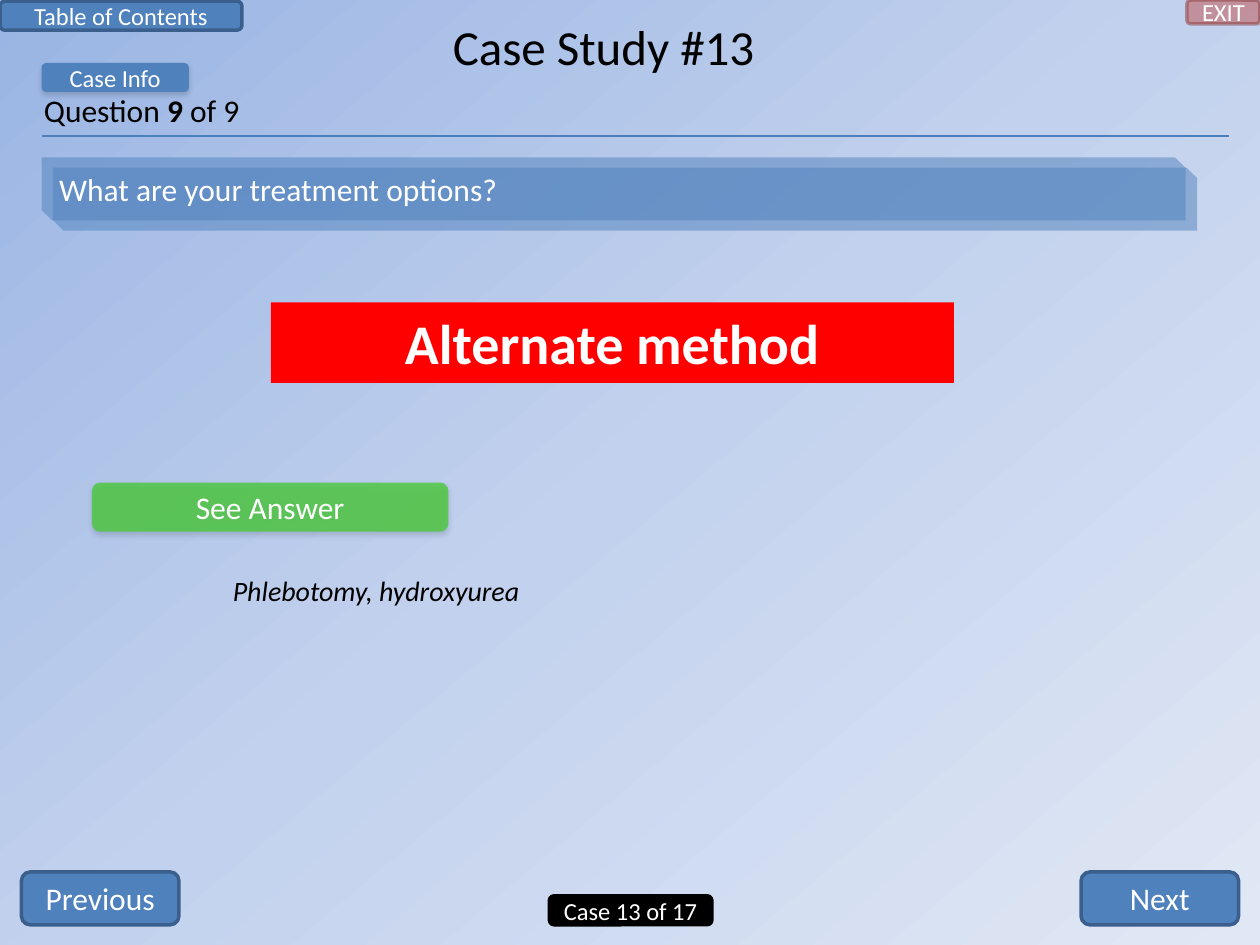
from copy import deepcopy
from dataclasses import dataclass
from typing import Optional

from lxml import etree
from pptx import Presentation
from pptx.dml.color import RGBColor
from pptx.enum import shapes, text
from pptx.oxml import ns
from pptx.util import Inches, Pt

FONT = "Calibri"
BLUE, DARK_BLUE = "4F81BD", "3A5F8C"
WHITE, BLACK = "FFFFFF", "000000"
ROUNDED = shapes.MSO_SHAPE.ROUNDED_RECTANGLE
SNIPPED = shapes.MSO_SHAPE.SNIP_2_DIAG_RECTANGLE
CENTER = text.PP_ALIGN.CENTER
LEFT = text.PP_ALIGN.LEFT
MIDDLE = text.MSO_ANCHOR.MIDDLE
TOP = text.MSO_ANCHOR.TOP


@dataclass
class Panel:
    left: float
    top: float
    width: float
    height: float
    label: str = ""
    size: int = 18
    fill: str = BLUE
    outline: Optional[str] = None
    opacity: int = 100
    shadow: bool = False
    preset: shapes.MSO_SHAPE = ROUNDED
    align: text.PP_ALIGN = CENTER


def color(value: str) -> RGBColor:
    return RGBColor.from_string(value)


def add_child(parent, tag: str, **attributes):
    return etree.SubElement(parent, ns.qn(tag), {k: str(v) for k, v in attributes.items()})


def set_opacity(shape, percent: int) -> None:
    for rgb in shape._element.spPr.iter(ns.qn("a:srgbClr")):
        add_child(rgb, "a:alpha", val=percent * 1000)


def add_shadow(shape) -> None:
    effects = shape._element.spPr.find(ns.qn("a:effectLst"))
    outer = add_child(effects, "a:outerShdw", blurRad=Pt(3.1), dist=Pt(1.8),
                      dir=90 * 60000, rotWithShape=0)
    add_child(add_child(outer, "a:srgbClr", val=BLACK), "a:alpha", val=16000)


def write(shape, *parts: str, size: int, ink: str = BLACK, bold_part: Optional[int] = None,
          italic: bool = False, align=LEFT, anchor=TOP, wrap: bool = True,
          grow: bool = False) -> None:
    frame = shape.text_frame
    frame.word_wrap = wrap
    frame.vertical_anchor = anchor
    if grow:
        frame.auto_size = text.MSO_AUTO_SIZE.SHAPE_TO_FIT_TEXT
    paragraph = frame.paragraphs[0]
    paragraph.alignment = align
    for index, part in enumerate(parts):
        run = paragraph.add_run()
        run.text = part
        run.font.name = FONT
        run.font.size = Pt(size)
        run.font.bold = index == bold_part
        run.font.italic = italic
        run.font.color.rgb = color(ink)


def add_panel(slide, panel: Panel):
    shape = slide.shapes.add_shape(panel.preset, Inches(panel.left), Inches(panel.top),
                                   Inches(panel.width), Inches(panel.height))
    shape.shadow.inherit = False
    shape.fill.solid()
    shape.fill.fore_color.rgb = color(panel.fill)
    if panel.outline:
        shape.line.color.rgb = color(panel.outline)
        shape.line.width = Pt(2)
    else:
        shape.line.fill.background()
    if panel.opacity < 100:
        set_opacity(shape, panel.opacity)
    if panel.shadow:
        add_shadow(shape)
    if panel.label:
        write(shape, panel.label, size=panel.size, ink=WHITE, align=panel.align, anchor=MIDDLE)
    return shape


def add_text(slide, left: float, top: float, width: float, height: float, *parts: str, **style):
    box = slide.shapes.add_textbox(Inches(left), Inches(top), Inches(width), Inches(height))
    write(box, *parts, grow=True, **style)


def paint_background(slide) -> None:
    fill = slide.background.fill
    fill.gradient()
    fill.gradient_angle = 310
    stop_list = next(slide._element.iter(ns.qn("a:gsLst")))
    stop_list.append(deepcopy(stop_list[-1]))
    stops = ((0, "9AB5E4"), (0.5, "C2D1ED"), (1, "E1E8F5"))
    for stop, (position, shade) in zip(fill.gradient_stops, stops):
        stop.position = position
        stop.color.rgb = color(shade)


def add_rule(slide, left: float, right: float, y: float) -> None:
    rule = slide.shapes.add_connector(shapes.MSO_CONNECTOR.STRAIGHT, Inches(left), Inches(y),
                                      Inches(right), Inches(y))
    rule.line.color.rgb = color("4B7EBC")
    rule.line.width = Pt(1.25)
    add_child(rule._element.spPr, "a:effectLst")


def main() -> None:
    deck = Presentation()
    deck.slide_width, deck.slide_height = Inches(10), Inches(7.5)
    slide = deck.slides.add_slide(deck.slide_layouts[6])
    paint_background(slide)

    # Question counter and header rule
    add_text(slide, 0.25, 0.67, 1.77, 0.71, "Question ", "9", " of 9",
             size=18, bold_part=1, wrap=False)
    add_rule(slide, 0.33, 9.75, 1.08)

    # Page navigation
    for left, label in ((0.17, "Previous"), (8.58, "Next")):
        add_panel(slide, Panel(left, 6.92, 1.25, 0.42, label, outline=DARK_BLUE))
    add_panel(slide, Panel(9.42, 0, 0.58, 0.19, "EXIT", 14, "C0504D", "8E3B39", opacity=50))

    # Question banner: two overlapping translucent layers
    for left, top, label in ((0.42, 1.33, ""), (0.33, 1.25, "What are your treatment options?")):
        add_panel(slide, Panel(left, top, 9.08, 0.5, label, opacity=50,
                               preset=SNIPPED, align=LEFT))

    # Title and case navigation
    add_text(slide, 2.58, 0.08, 4.42, 0.57, "Case Study #13", size=28, align=CENTER)
    add_panel(slide, Panel(4.36, 7.11, 1.29, 0.23, "Case 13 of 17", 14, BLACK, BLACK))
    add_panel(slide, Panel(0.33, 0.5, 1.17, 0.23, "Case Info", 14, shadow=True))
    add_panel(slide, Panel(0, 0.01, 1.92, 0.23, "Table of Contents", 14, outline=DARK_BLUE))

    # Answer and alternate method
    add_text(slide, 1.75, 4.5, 5, 0.37, "Phlebotomy, hydroxyurea", size=16, italic=True)
    method = add_panel(slide, Panel(2.15, 2.4, 5.42, 0.64, fill="FF0000",
                                    preset=shapes.MSO_SHAPE.RECTANGLE))
    write(method, "Alternate method", size=32, ink=WHITE, bold_part=0, align=CENTER, grow=True)
    add_panel(slide, Panel(0.73, 3.83, 2.83, 0.39, "See Answer", fill="48C937",
                           opacity=78, shadow=True))

    deck.save("out.pptx")


if __name__ == "__main__":
    main()
